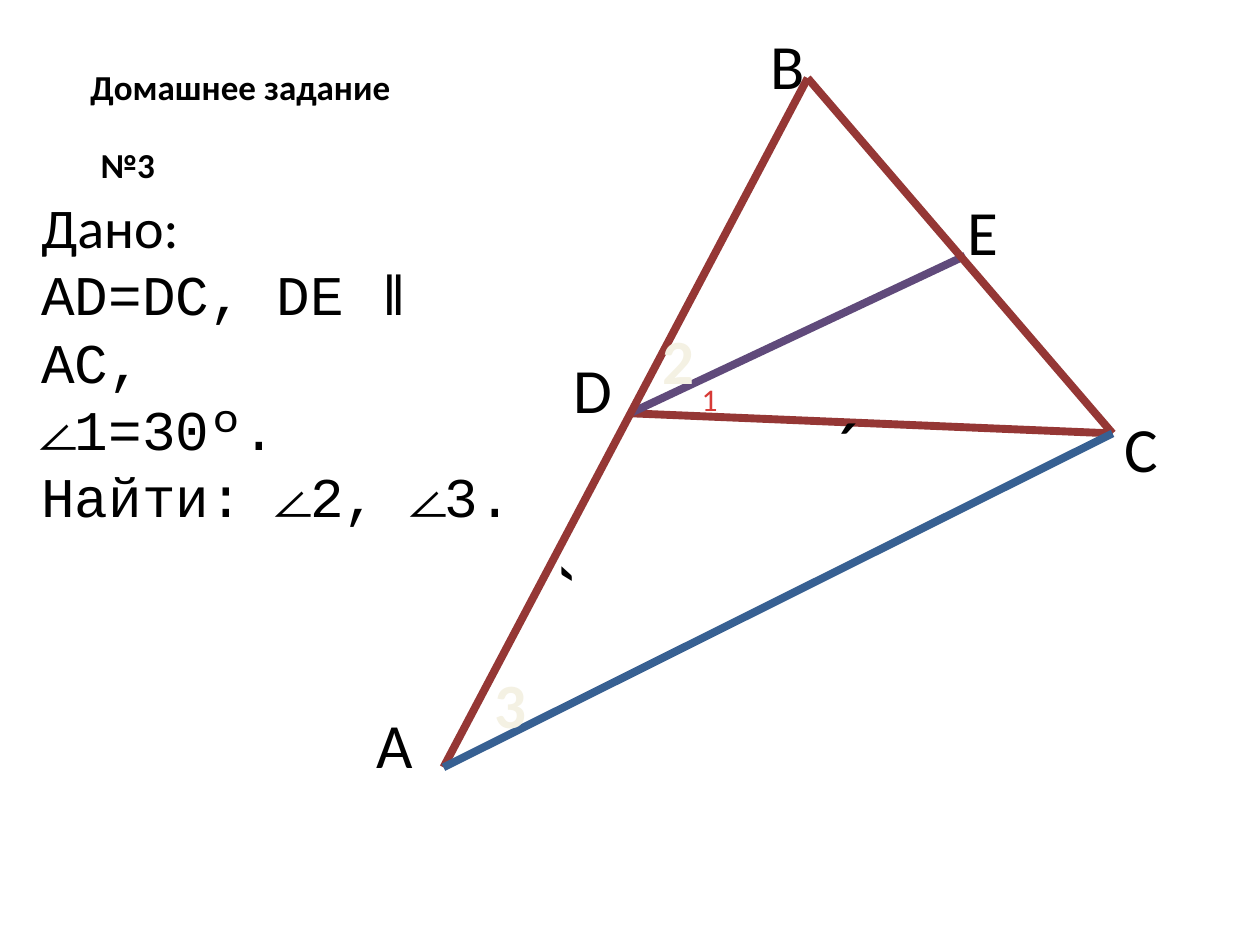
from lxml.etree import SubElement
from pptx import Presentation
from pptx.dml.color import RGBColor
from pptx.enum.shapes import MSO_CONNECTOR
from pptx.oxml.ns import qn
from pptx.util import Inches, Pt

BLACK, CREAM, RED = "000000", "F4F1E3", "D73A36"
MAROON, PURPLE, BLUE = "953735", "604A7B", "376092"


def rgb(value):
    return RGBColor.from_string(value)


def add_text(slide, box, lines, size, color=BLACK, bold=False, wrap=False,
             fonts=("Calibri",)):
    """Place lines of text; the last font serves all remaining lines."""
    sp = slide.shapes.add_textbox(*(Inches(v) for v in box))
    tf = sp.text_frame
    tf.word_wrap = wrap
    tf.text = "\n".join(lines)
    for i, p in enumerate(tf.paragraphs):
        for r in p.runs:
            r.font.name = fonts[min(i, len(fonts) - 1)]
            r.font.size = Pt(size)
            r.font.bold = bold
            r.font.color.rgb = rgb(color)
    return sp


def add_segment(slide, start, end, color):
    line = slide.shapes.add_connector(
        MSO_CONNECTOR.STRAIGHT, *(Inches(v) for v in (*start, *end)))
    line.line.color.rgb = rgb(color)
    line.line.width = Pt(4.5)
    SubElement(line._element.spPr, qn("a:effectLst"))


def add_problem(slide, left, top, width):
    # Heading and number
    add_text(slide, (left + 0.39, top, 3.33, 0.44), ["Домашнее задание"], 20, bold=True)
    add_text(slide, (left + 0.47, top + 0.62, 0.76, 0.44), ["№3"], 20, bold=True)
    # Given and to find
    add_text(slide, (left, top + 1.01, width, 2.26),
             ["Дано:", "AD=DC, DE ǁ AC,", "∠1=30º.", "Найти: ∠2, ∠3."],
             32, wrap=True, fonts=("Calibri", "Courier New"))


def add_triangle(slide, left, top, width, height):
    points = {
        "A": (left, top + height),
        "B": (left + 2.89, top),
        "C": (left + width, top + 2.82),
        "D": (left + 1.48, top + 2.66),
        "E": (left + 4.14, top + 1.41),
    }
    # Sides and inner segments
    for ends, color in (("DC", MAROON), ("ED", PURPLE), ("AB", MAROON),
                        ("BC", MAROON), ("AC", BLUE)):
        add_segment(slide, points[ends[0]], points[ends[1]], color)

    # Vertex names, offset from their points
    offsets = {"A": (-0.63, -0.54), "B": (-0.39, -0.46), "C": (0, -0.24),
               "D": (-0.55, -0.55), "E": (-0.08, -0.55)}
    for name, (dx, dy) in offsets.items():
        x, y = points[name]
        add_text(slide, (x + dx, y + dy, 0.55, 0.71), [name], 36)

    # Angle numbers
    for number, dx, dy in (("2", 1.64, 1.88), ("3", 0.31, 4.61)):
        add_text(slide, (left + dx, top + dy, 0.56, 0.71), [number], 36, CREAM, bold=True)
    add_text(slide, (left + 1.95, top + 2.35, 0.36, 0.4), ["1"], 18, RED)

    # Equal-length marks on DC and AD
    for dx, dy, angle in ((3.04, 2.5, 0), (0.82, 3.4, 270)):
        mark = add_text(slide, (left + dx, top + dy, 0.59, 0.84), ["´"], 44)
        mark.rotation = angle


def main():
    prs = Presentation()
    prs.slide_width, prs.slide_height = Inches(10), Inches(7.5)
    s = prs.slides.add_slide(prs.slide_layouts[6])
    add_triangle(s, 3.52, 0.62, 5.31, 5.47)
    add_problem(s, 0.23, 0.47, 3.96)
    prs.save("out.pptx")


if __name__ == "__main__":
    main()
